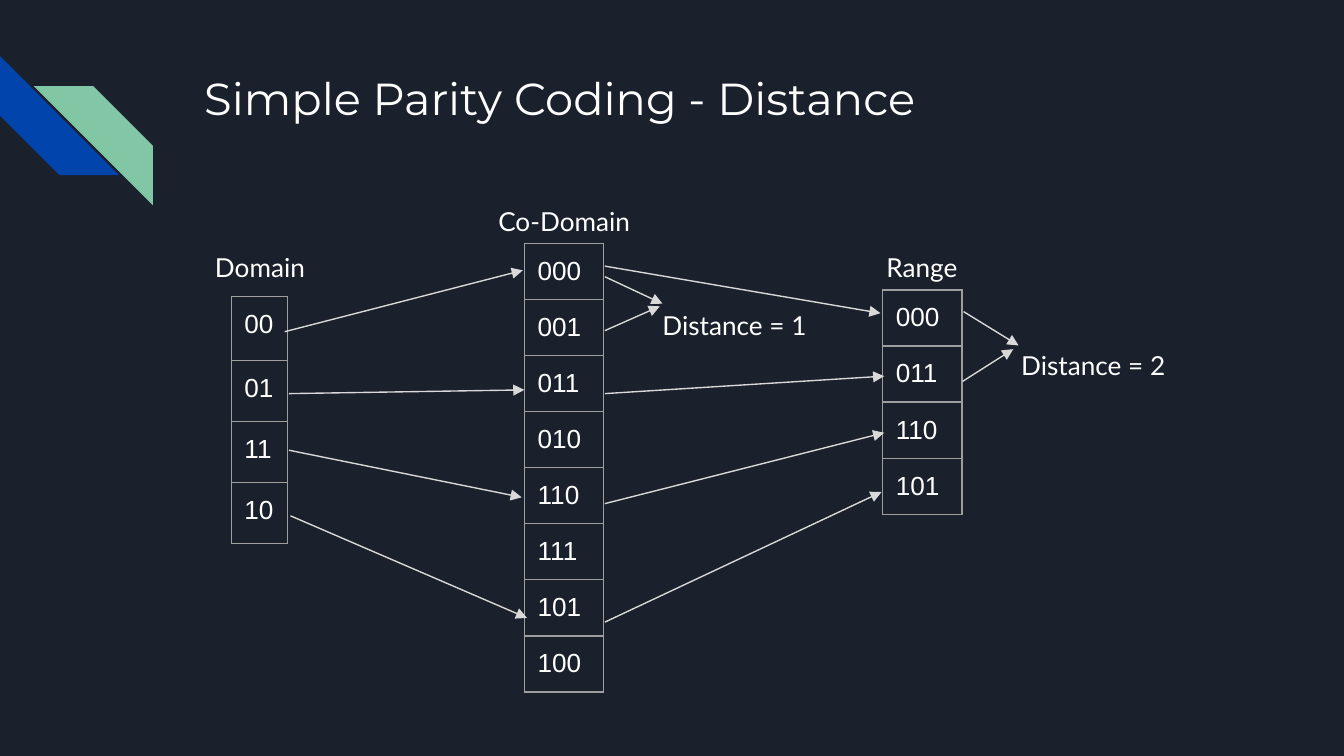
from lxml.etree import SubElement
from pptx import Presentation
from pptx.dml.color import RGBColor
from pptx.enum.shapes import MSO_CONNECTOR, MSO_SHAPE
from pptx.enum.text import MSO_ANCHOR, PP_ALIGN
from pptx.oxml import parse_xml
from pptx.oxml.ns import nsdecls, qn
from pptx.util import Cm, Pt


def color(hex_code):
    return RGBColor.from_string(hex_code)


def write(frame, text, font="Lato", size=14, align=PP_ALIGN.LEFT):
    """Fill a text frame with one formatted white line."""
    para = frame.paragraphs[0]
    para.alignment = align
    span = para.add_run()
    span.text = text
    span.font.name = font
    span.font.size = Pt(size)
    span.font.bold = False
    span.font.color.rgb = color("FFFFFF")


deck = Presentation()
deck.slide_width, deck.slide_height = Cm(25.4), Cm(14.29)
page = deck.slides.add_slide(deck.slide_layouts[5])
page.background.fill.solid()
page.background.fill.fore_color.rgb = color("1B212C")
inset = Cm(0.25)

# Corner stripes
for left, top, fill, rotation, flipped in [
    (0, 1.06, "0145AC", 270, False),
    (0.64, 1.63, "82C7A5", 0, True),
]:
    stripe = page.shapes.add_shape(
        MSO_SHAPE.DIAGONAL_STRIPE, Cm(left), Cm(top), Cm(2.25), Cm(2.25))
    stripe.shadow.inherit = False
    stripe.rotation = rotation
    stripe.fill.solid()
    stripe.fill.fore_color.rgb = color(fill)
    stripe.line.fill.background()
    if flipped:
        stripe._element.spPr.find(qn("a:xfrm")).set("flipH", "1")

# Title
title = page.shapes.title
title.left, title.top, title.width, title.height = Cm(3.61), Cm(1.09), Cm(19.56), Cm(2.54)
frame = title.text_frame
frame.margin_left = frame.margin_right = frame.margin_top = frame.margin_bottom = inset
frame.vertical_anchor = MSO_ANCHOR.TOP
frame.word_wrap = True
write(frame, "Simple Parity Coding - Distance", font="Montserrat", size=24)

# Code tables: left, top, column width, first row height, other row height, codes
for left, top, width, first_height, height, codes in [
    (4.37, 5.61, 1.07, 1.21, 1.15, ["00", "01", "11", "10"]),
    (9.91, 4.6, 1.5, 1.06, 1.06,
     ["000", "001", "011", "010", "110", "111", "101", "100"]),
    (16.68, 5.48, 1.5, 1.06, 1.06, ["000", "011", "110", "101"]),
]:
    total = first_height + height * (len(codes) - 1)
    table = page.shapes.add_table(
        len(codes), 1, Cm(left), Cm(top), Cm(width), Cm(total)).table
    table.first_row = table.horz_banding = False
    for index, code in enumerate(codes):
        table.rows[index].height = Cm(height if index else first_height)
        cell = table.cell(index, 0)
        cell.margin_left = cell.margin_right = cell.margin_top = cell.margin_bottom = inset
        cell.fill.background()
        write(cell.text_frame, code, font="Arial")
        for position, side in enumerate(["lnL", "lnR", "lnT", "lnB"]):
            border = parse_xml(
                f'<a:{side} {nsdecls("a")} w="{Pt(0.75)}"><a:solidFill>'
                f'<a:srgbClr val="9E9E9E"/></a:solidFill></a:{side}>')
            cell._tc.get_or_add_tcPr().insert(position, border)

# Labels
for text, left, top, width, height, align in [
    ("Domain", 3.66, 4.5, 2.51, 0.97, PP_ALIGN.CENTER),
    ("Co-Domain", 9.04, 3.63, 3.25, 0.97, PP_ALIGN.CENTER),
    ("Range", 15.8, 4.5, 3.25, 0.97, PP_ALIGN.CENTER),
    ("Distance = 2", 19.05, 6.35, 3.58, 0.89, PP_ALIGN.LEFT),
    ("Distance = 1", 12.27, 5.59, 3.58, 0.89, PP_ALIGN.LEFT),
]:
    box = page.shapes.add_textbox(Cm(left), Cm(top), Cm(width), Cm(height))
    frame = box.text_frame
    frame.word_wrap = True
    frame.margin_left = frame.margin_right = frame.margin_top = frame.margin_bottom = inset
    write(frame, text, align=align)

# Arrows: start x, start y, end x, end y
domain_to_codomain = [
    (5.38, 6.27, 9.88, 5.11), (5.46, 7.44, 9.91, 7.37),
    (5.49, 9.75, 9.96, 11.68), (5.46, 8.51, 9.86, 9.4),
]
codomain_to_range = [
    (11.43, 5.03, 16.64, 5.92), (11.43, 7.44, 16.71, 7.11),
    (11.43, 11.76, 16.66, 9.3), (11.43, 9.52, 16.71, 8.18),
]
distance_pairs = [
    (18.21, 5.89, 19.25, 6.53), (18.19, 7.21, 19.15, 6.6),
    (11.43, 5.23, 12.52, 5.74), (11.43, 6.25, 12.47, 5.79),
]
for points in domain_to_codomain + codomain_to_range + distance_pairs:
    arrow = page.shapes.add_connector(MSO_CONNECTOR.STRAIGHT, *map(Cm, points))
    arrow.line.color.rgb = color("D9D9D9")
    arrow.line.width = Pt(0.75)
    SubElement(arrow.line._get_or_add_ln(), qn("a:tailEnd"), type="triangle")
    SubElement(arrow._element.spPr, qn("a:effectLst"))

deck.save("out.pptx")
